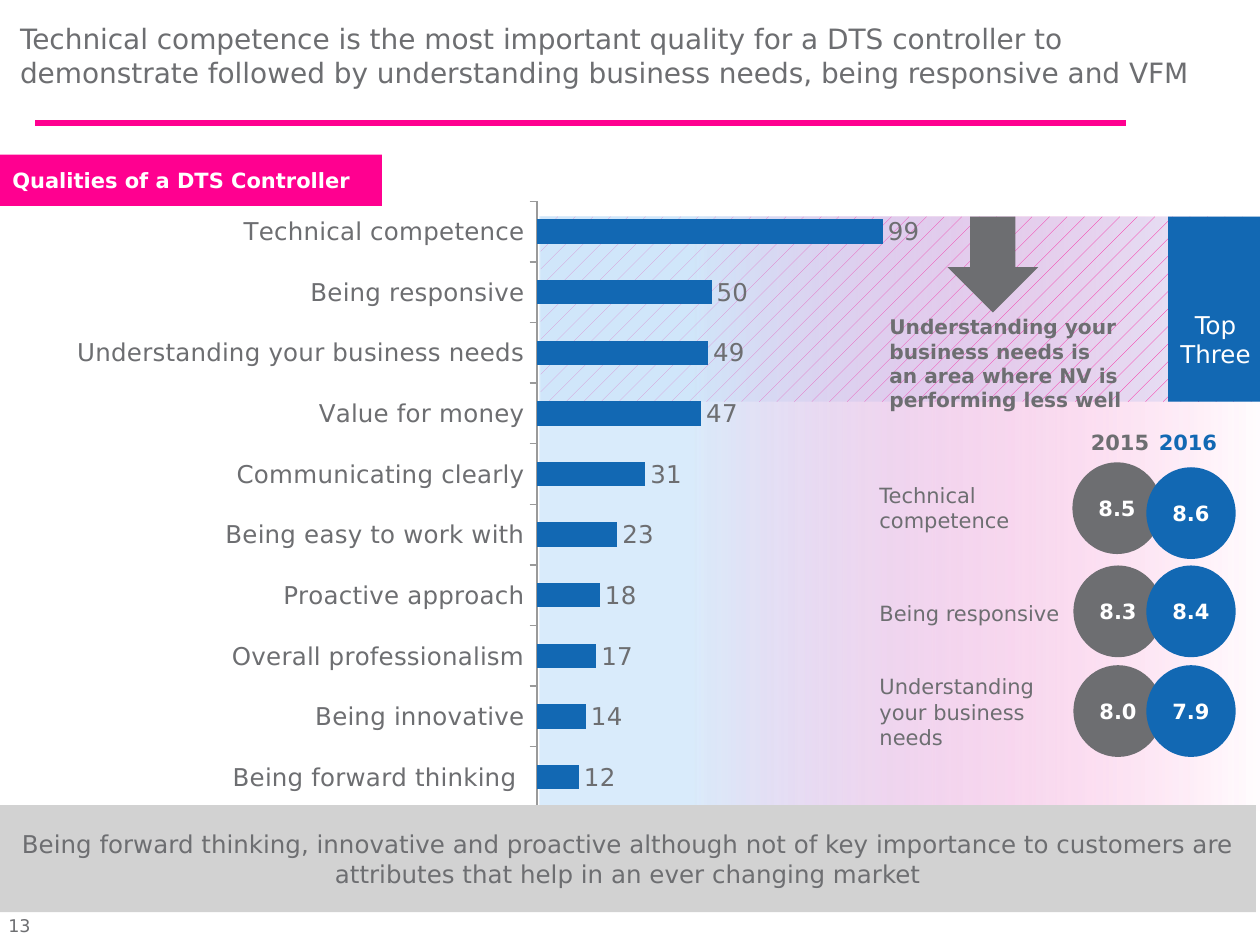
from lxml import etree
from pptx import Presentation
from pptx.chart.data import CategoryChartData
from pptx.dml.color import RGBColor
from pptx.enum.chart import XL_CHART_TYPE, XL_LABEL_POSITION, XL_TICK_LABEL_POSITION, XL_TICK_MARK
from pptx.enum.dml import MSO_PATTERN
from pptx.enum.shapes import MSO_CONNECTOR, MSO_SHAPE
from pptx.enum.text import MSO_ANCHOR, PP_ALIGN
from pptx.oxml.ns import qn
from pptx.util import Cm, Pt

RECTANGLE, ELLIPSE, DOWN_ARROW = MSO_SHAPE.RECTANGLE, MSO_SHAPE.OVAL, MSO_SHAPE.DOWN_ARROW
LEFT, CENTER = PP_ALIGN.LEFT, PP_ALIGN.CENTER
TOP, MIDDLE, BOTTOM = MSO_ANCHOR.TOP, MSO_ANCHOR.MIDDLE, MSO_ANCHOR.BOTTOM

FONT = "DejaVu Sans"
PINK = RGBColor(0xFF, 0x00, 0x90)
LIGHT_PINK = RGBColor(0xFF, 0x21, 0xA0)
BLUE = RGBColor(0x12, 0x68, 0xB3)
SKY = RGBColor(0xC6, 0xE1, 0xF9)
PALE_BLUE = RGBColor(0xE4, 0xF1, 0xFC)
GREY = RGBColor(0x6D, 0x6E, 0x71)
AXIS_GREY = RGBColor(0x9A, 0x9A, 0x9A)
LIGHT_GREY = RGBColor(0xD2, 0xD2, 0xD2)
WHITE = RGBColor(0xFF, 0xFF, 0xFF)

QUALITIES = [
    ("Technical competence", 99), ("Being responsive", 50),
    ("Understanding your business needs", 49), ("Value for money", 47),
    ("Communicating clearly", 31), ("Being easy to work with", 23),
    ("Proactive approach", 18), ("Overall professionalism", 17),
    ("Being innovative", 14), ("Being forward thinking ", 12),
]
# Label, label top and height, then left, top and score of each year's circle
RATINGS = [
    ("Technical competence", 9.6, 1.37, (21.62, 9.32, "8.5"), (23.11, 9.42, "8.6")),
    ("Being responsive", 11.99, 0.84, (21.64, 11.4, "8.3"), (23.11, 11.4, "8.4")),
    ("Understanding your business needs", 13.46, 1.8,
     (21.64, 13.41, "8.0"), (23.11, 13.41, "7.9")),
]


def write_text(shape, text, size, color, bold=False, align=LEFT, anchor=TOP):
    frame = shape.text_frame
    frame.word_wrap = True
    frame.vertical_anchor = anchor
    paragraph = frame.paragraphs[0]
    paragraph.alignment = align
    run = paragraph.add_run()
    run.text = text
    run.font.name = FONT
    run.font.size = Pt(size)
    run.font.bold = bold
    run.font.color.rgb = color


def add_text(slide, box, text, size, color, **style):
    text_box = slide.shapes.add_textbox(*map(Cm, box))
    write_text(text_box, text, size, color, **style)


def add_block(slide, kind, box, color=None):
    shape = slide.shapes.add_shape(kind, *map(Cm, box))
    shape.shadow.inherit = False
    shape.line.fill.background()
    if color is not None:
        shape.fill.solid()
        shape.fill.fore_color.rgb = color
    return shape


def add_hatched_band(slide, box):
    fill = add_block(slide, RECTANGLE, box).fill
    fill.patterned()
    fill.pattern = MSO_PATTERN.PERCENT_5
    fill.fore_color.rgb = PINK
    fill.back_color.rgb = PALE_BLUE


def add_fading_panel(slide, box):
    panel = add_block(slide, RECTANGLE, box)
    panel.fill.gradient()
    panel.fill.gradient_angle = 0
    stops = panel.fill.gradient_stops
    for stop, color, position in zip(stops, (SKY, LIGHT_PINK), (0.21, 1)):
        stop.color.rgb = color
        stop.position = position
    # Opacity of each stop, in thousandths of a percent
    for color_element, alpha in zip(panel._element.spPr.iter(qn("a:srgbClr")), (64000, 0)):
        etree.SubElement(color_element, qn("a:alpha"), val=str(alpha))


def add_rule(slide, left, right, top):
    rule = slide.shapes.add_connector(
        MSO_CONNECTOR.STRAIGHT, Cm(left), Cm(top), Cm(right), Cm(top))
    rule.line.color.rgb = PINK
    rule.line.width = Pt(3)
    etree.SubElement(rule._element.spPr, qn("a:effectLst"))


def set_plot_layout(chart, x, y, width, height):
    plot_area = chart._chartSpace.chart.plotArea
    for old_layout in plot_area.findall(qn("c:layout")):
        plot_area.remove(old_layout)
    layout = etree.Element(qn("c:layout"))
    manual = etree.SubElement(layout, qn("c:manualLayout"))
    settings = [("layoutTarget", "inner"), ("xMode", "edge"), ("yMode", "edge"),
                ("x", x), ("y", y), ("w", width), ("h", height)]
    for name, value in settings:
        etree.SubElement(manual, qn(f"c:{name}"), val=str(value))
    plot_area.insert(0, layout)


def add_qualities_chart(slide, box):
    data = CategoryChartData(number_format="0")
    data.categories = [name for name, _ in QUALITIES]
    data.add_series("Series 1", [value for _, value in QUALITIES])
    chart = slide.shapes.add_chart(XL_CHART_TYPE.BAR_CLUSTERED, *map(Cm, box), data).chart
    chart.has_legend = False
    chart.has_title = False
    chart.font.name = FONT
    chart.font.size = Pt(14)
    chart.font.color.rgb = GREY

    category_axis = chart.category_axis
    category_axis.reverse_order = True
    category_axis.major_tick_mark = XL_TICK_MARK.OUTSIDE
    category_axis.tick_label_position = XL_TICK_LABEL_POSITION.LOW
    category_axis.format.line.color.rgb = AXIS_GREY
    value_axis = chart.value_axis
    value_axis.minimum_scale = 0
    value_axis.maximum_scale = 120
    value_axis.has_major_gridlines = False
    value_axis.visible = False

    plot = chart.plots[0]
    plot.gap_width = 150
    plot.vary_by_categories = False
    fill = plot.series[0].format.fill
    fill.solid()
    fill.fore_color.rgb = BLUE
    plot.has_data_labels = True
    labels = plot.data_labels
    labels.show_value = True
    labels.number_format = "0"
    labels.number_format_is_linked = False
    labels.position = XL_LABEL_POSITION.OUTSIDE_END
    set_plot_layout(chart, 0.576, 0.027, 0.394, 0.945)


def add_score(slide, left, top, score, color):
    circle = add_block(slide, ELLIPSE, (left, top, 1.8, 1.85), color)
    write_text(circle, score, 12, WHITE, bold=True, align=CENTER, anchor=MIDDLE)
    circle.text_frame.word_wrap = False


def add_ratings(slide):
    for year, left, color in (("2015", 21.74, GREY), ("2016", 23.11, BLUE)):
        add_text(slide, (left, 8.53, 1.8, 0.76), year, 12, color, bold=True)
    for label, top, height, earlier, later in RATINGS:
        add_text(slide, (17.48, top, 4.47, height), label, 12, GREY)
        add_score(slide, *earlier, GREY)
        add_score(slide, *later, BLUE)


def main():
    presentation = Presentation()
    presentation.slide_width, presentation.slide_height = Cm(25.4), Cm(19.05)
    slide = presentation.slides.add_slide(presentation.slide_layouts[5])

    # Title and rule
    title = slide.shapes.title
    title.left, title.top, title.width, title.height = map(Cm, (0.15, 0.03, 25.25, 2.16))
    write_text(title, "Technical competence is the most important quality for a DTS "
               "controller to demonstrate followed by understanding business needs, "
               "being responsive and VFM", 16, GREY, anchor=MIDDLE)
    add_rule(slide, 0.71, 22.7, 2.48)

    # Backgrounds, section heading and chart
    add_hatched_band(slide, (10.9, 4.37, 14.5, 3.73))
    add_fading_panel(slide, (10.87, 4.37, 14.53, 11.96))
    heading = add_block(slide, RECTANGLE, (0, 3.12, 7.7, 1.03), PINK)
    write_text(heading, "Qualities of a DTS Controller", 12, WHITE, bold=True, anchor=MIDDLE)
    add_qualities_chart(slide, (-1.52, 3.71, 21.44, 12.93))

    # Top three marker and callout
    add_block(slide, RECTANGLE, (23.55, 4.37, 1.85, 3.73), BLUE)
    add_text(slide, (23.44, 6.12, 2.13, 1.45), "Top Three", 14, WHITE, align=CENTER)
    add_text(slide, (17.68, 6.22, 5.2, 2.24), "Understanding your business needs is an "
             "area where NV is performing less well", 11.5, GREY, bold=True)
    add_block(slide, DOWN_ARROW, (19.1, 4.37, 1.83, 1.93), GREY)

    # Yearly ratings
    add_ratings(slide)

    # Conclusion and page number
    conclusion = add_block(slide, RECTANGLE, (0, 16.23, 25.32, 2.16), LIGHT_GREY)
    write_text(conclusion, "Being forward thinking, innovative and proactive although not of "
               "key importance to customers are attributes that help in an ever changing "
               "market", 14, GREY, align=CENTER, anchor=MIDDLE)
    add_text(slide, (-0.08, 18.31, 2.9, 0.69), "13", 10, GREY, anchor=BOTTOM)

    presentation.save("out.pptx")


if __name__ == "__main__":
    main()
